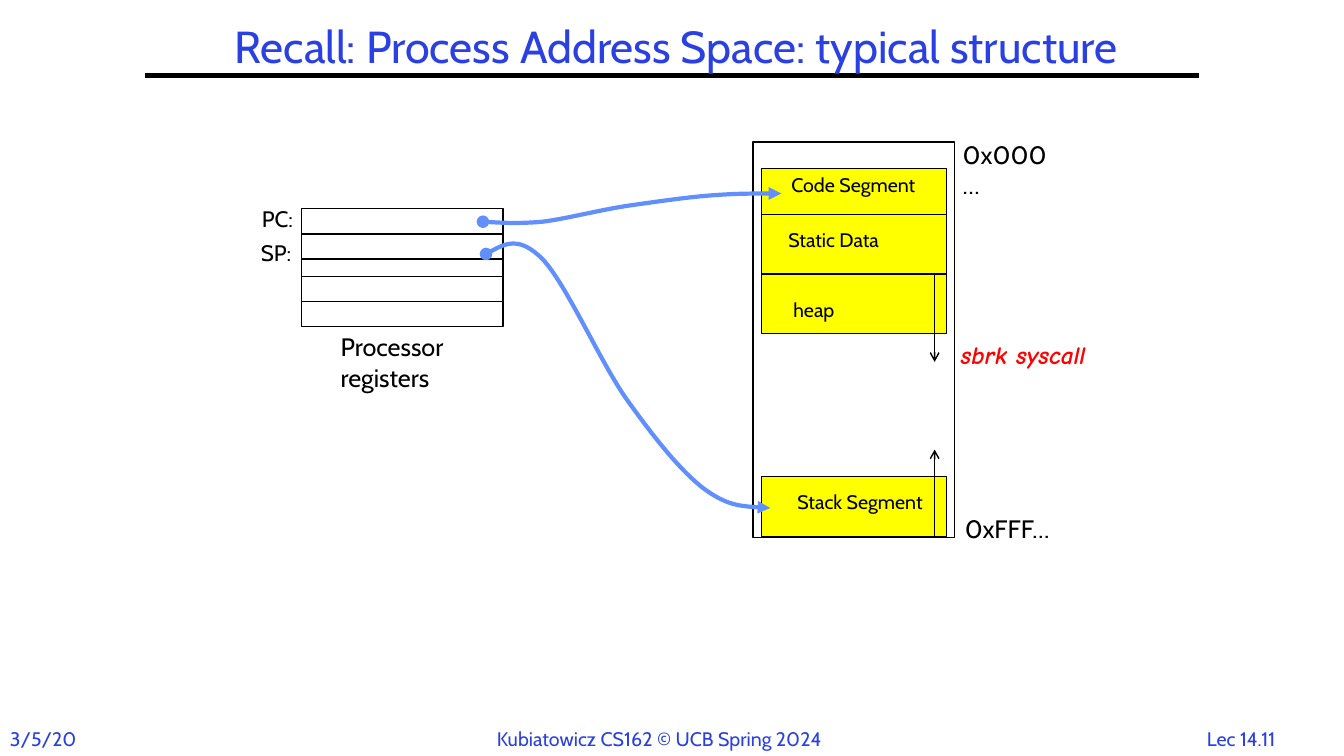
from lxml.etree import SubElement
from pptx import Presentation
from pptx.dml.color import RGBColor
from pptx.enum.shapes import MSO_CONNECTOR as Connector, MSO_SHAPE as Shape
from pptx.enum.text import MSO_ANCHOR as Anchor, PP_ALIGN as Align
from pptx.oxml.ns import qn
from pptx.util import Inches, Pt

COLORS = {"blue": "2A40E2", "black": "000000", "yellow": "FFFF00",
          "arrow": "618FFD", "red": "FF0000"}

TITLE = "Recall: Process Address Space: typical structure"
TITLE_BOX = (1.75, 0.13, 9.92, 0.71)

# text, left, top, width, height, alignment
FOOTERS = [
    ("Lec 14.11", 11.77, 7.16, 1.08, 0.33, Align.CENTER),
    ("3/5/20", 0, 7.16, 0.96, 0.34, Align.LEFT),
    ("Kubiatowicz CS162 © UCB Spring 2024", 4.83, 7.16, 3.68, 0.34, Align.LEFT),
]

# lines of text, left, top, width, height, size
LABELS = [
    (["Processor", "registers"], 3.28, 3.24, 1.34, 0.71, 18),
    (["PC:"], 2.5, 1.99, 0.58, 0.37, 16),
    (["SP:"], 2.49, 2.32, 0.56, 0.37, 16),
    (["0x000…"], 9.45, 1.33, 1.14, 0.4, 18),
    (["0xFFF…"], 9.47, 5.04, 1.18, 0.4, 18),
]

REGISTERS = (2.99, 2.07, 2, 1.17)
REGISTER_HEIGHT = 0.25
REGISTER_TOPS = [2.32, 2.74]

MEMORY = (7.47, 1.41, 2, 3.92)
SEGMENT_LEFT, SEGMENT_WIDTH = 7.55, 1.84
# name, top, height, then left, top and width of its label
SEGMENTS = [
    ("Code Segment", 1.67, 0.46, 7.75, 1.67, 1.51),
    ("Static Data", 2.13, 0.59, 7.72, 2.21, 1.16),
    ("heap", 2.72, 0.59, 7.77, 2.91, 0.99),
    ("Stack Segment", 4.73, 0.59, 7.81, 4.81, 1.53),
]

GROWTH_X = 9.27
GROWTH_ARROWS = [(5.32, 4.46), (2.72, 3.59)]

# start point, then two control points and an end point for each curve
POINTERS = [
    [(4.79, 2.2),
     (4.97, 2.21), (5.14, 2.22), (5.38, 2.2),
     (5.62, 2.17), (5.96, 2.08), (6.24, 2.04),
     (6.52, 2), (6.79, 1.96), (7.04, 1.94),
     (7.29, 1.92), (7.52, 1.92), (7.75, 1.92)],
    [(4.82, 2.52),
     (4.98, 2.43), (5.15, 2.34), (5.38, 2.57),
     (5.61, 2.81), (5.94, 3.56), (6.2, 3.94),
     (6.47, 4.32), (6.73, 4.65), (6.97, 4.84),
     (7.21, 5.02), (7.43, 5.03), (7.64, 5.04)],
]


def rgb(name):
    return RGBColor.from_string(COLORS[name])


def add_text(slide, lines, box, size, color="black", align=Align.LEFT, font="Cabin",
             emphasis=False, anchor=Anchor.TOP, spacing=None):
    frame = slide.shapes.add_textbox(*map(Inches, box)).text_frame
    frame.word_wrap = True
    frame.vertical_anchor = anchor
    for index, line in enumerate(lines):
        paragraph = frame.add_paragraph() if index else frame.paragraphs[0]
        paragraph.alignment = align
        paragraph.line_spacing = spacing
        run = paragraph.add_run()
        run.text = line
        run.font.name = font
        run.font.size = Pt(size)
        run.font.color.rgb = rgb(color)
        if emphasis:
            run.font.bold = run.font.italic = True


def add_box(slide, box, fill=None):
    shape = slide.shapes.add_shape(Shape.RECTANGLE, *map(Inches, box))
    shape.shadow.inherit = False
    if fill:
        shape.fill.solid()
        shape.fill.fore_color.rgb = rgb(fill)
    else:
        shape.fill.background()
    style_line(shape.line, "black", 1)


def style_line(line, color, width, head=None, tail=None):
    line.color.rgb = rgb(color)
    line.width = Pt(width)
    for tag, kind in (("a:headEnd", head), ("a:tailEnd", tail)):
        if kind:
            SubElement(line._get_or_add_ln(), qn(tag)).set("type", kind)


def add_line(slide, start, end, width, tail=None):
    connector = slide.shapes.add_connector(
        Connector.STRAIGHT, *map(Inches, (*start, *end)))
    style_line(connector.line, "black", width, tail=tail)
    SubElement(connector._element.spPr, qn("a:effectLst"))


def add_pointer(slide, points):
    """Draw a smooth arrow: each three line segments become one cubic curve."""
    start, *rest = [(Inches(x), Inches(y)) for x, y in points]
    builder = slide.shapes.build_freeform(*start)
    builder.add_line_segments(rest, close=False)
    shape = builder.convert_to_shape()
    shape.shadow.inherit = False
    shape.fill.background()
    style_line(shape.line, "arrow", 3, head="oval", tail="triangle")
    outline = next(shape._element.iter(qn("a:path")))
    segments = outline.findall(qn("a:lnTo"))
    for first in range(0, len(segments), 3):
        curve = SubElement(outline, qn("a:cubicBezTo"))
        for segment in segments[first:first + 3]:
            curve.append(segment[0])
            outline.remove(segment)


def main():
    presentation = Presentation()
    presentation.slide_width = Inches(13.33)
    presentation.slide_height = Inches(7.5)
    slide = presentation.slides.add_slide(presentation.slide_layouts[6])

    for text, *box, align in FOOTERS:
        add_text(slide, [text], box, 14, "blue", align)
    add_line(slide, (1.44, 0.75), (11.89, 0.75), 3)
    add_text(slide, [TITLE], TITLE_BOX, 32, "blue", Align.CENTER,
             anchor=Anchor.MIDDLE, spacing=0.9)

    add_box(slide, REGISTERS)
    for top in REGISTER_TOPS:
        add_box(slide, (REGISTERS[0], top, REGISTERS[2], REGISTER_HEIGHT))
    add_box(slide, MEMORY)
    for lines, *box, size in LABELS:
        add_text(slide, lines, box, size)

    for name, top, height, label_left, label_top, label_width in SEGMENTS:
        add_box(slide, (SEGMENT_LEFT, top, SEGMENT_WIDTH, height), "yellow")
        add_text(slide, [name], (label_left, label_top, label_width, 0.34), 14)
    for start, end in GROWTH_ARROWS:
        add_line(slide, (GROWTH_X, start), (GROWTH_X, end), 1, tail="arrow")
    for points in POINTERS:
        add_pointer(slide, points)
    add_text(slide, ["sbrk syscall"], (9.43, 3.32, 1.63, 0.4), 18, "red",
             font="Comic Neue", emphasis=True)

    presentation.save("out.pptx")


if __name__ == "__main__":
    main()
